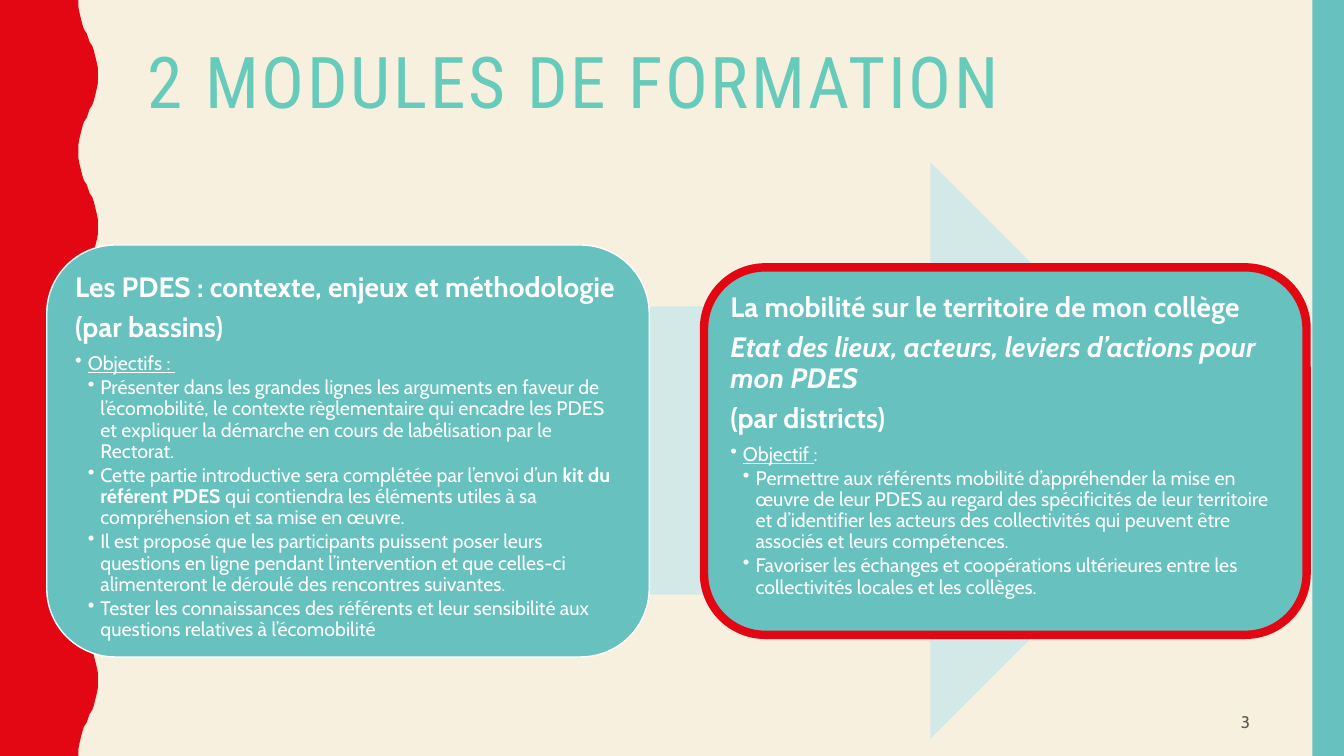
from pptx import Presentation
from pptx.dml.color import RGBColor
from pptx.enum.shapes import MSO_SHAPE
from pptx.enum.text import MSO_ANCHOR, PP_ALIGN
from pptx.oxml.ns import qn
from pptx.util import Pt
from lxml.etree import SubElement

WIDTH, HEIGHT = 960, 540
CREAM, RED, TEAL, MINT = "F7F0DF", "E30613", "66C1BF", "66CBBA"
PALE, WHITE, GREY = "D3E9E8", "FFFFFF", "595959"
BODY, HEAD = "Cabin", "Roboto Condensed"


def rgb(value):
    return RGBColor.from_string(value)


class Deck:
    """Holds the style and the current slide; one method per kind of element."""

    def __init__(self):
        self.prs = Presentation()
        self.prs.slide_width, self.prs.slide_height = Pt(WIDTH), Pt(HEIGHT)
        self.s = self.prs.slides.add_slide(self.prs.slide_layouts[6])
        self.s.background.fill.solid()
        self.s.background.fill.fore_color.rgb = rgb(CREAM)

    def paint(self, sp, fill, line=None, weight=1):
        sp.shadow.inherit = False
        sp.fill.solid()
        sp.fill.fore_color.rgb = rgb(fill)
        if line:
            sp.line.color.rgb = rgb(line)
            sp.line.width = Pt(weight)
        else:
            sp.line.fill.background()
        return sp

    def shape(self, kind, box, fill, line=None, weight=1):
        sp = self.s.shapes.add_shape(kind, *map(Pt, box))
        return self.paint(sp, fill, line, weight)

    def outline(self, points, fill):
        builder = self.s.shapes.build_freeform(*points[0], scale=Pt(1))
        builder.add_line_segments(points[1:], close=True)
        return self.paint(builder.convert_to_shape(), fill)

    def run(self, p, text, size, color, font=BODY, bold=False, italic=False, underline=False):
        r = p.add_run()
        r.text = text
        f = r.font
        f.name, f.size, f.color.rgb = font, Pt(size), rgb(color)
        f.bold, f.italic, f.underline = bold, italic, underline
        return r

    def text(self, box):
        tf = self.s.shapes.add_textbox(*map(Pt, box)).text_frame
        tf.word_wrap = True
        return tf

    def bullet(self, p, level):
        p.level = level
        pPr = p._p.get_or_add_pPr()
        pPr.set("marL", str(Pt(9 * level)))
        pPr.set("indent", str(-Pt(9)))
        SubElement(pPr, qn("a:buChar")).set("char", "•")

    def card(self, box, line, weight, paragraphs):
        sp = self.shape(MSO_SHAPE.ROUNDED_RECTANGLE, box, TEAL, line, weight)
        tf = sp.text_frame
        tf.word_wrap = True
        tf.vertical_anchor = MSO_ANCHOR.TOP
        tf.margin_left = tf.margin_top = tf.margin_right = tf.margin_bottom = Pt(6)
        for i, (level, runs) in enumerate(paragraphs):
            p = tf.add_paragraph() if i else tf.paragraphs[0]
            p.alignment = PP_ALIGN.LEFT
            p.line_spacing = 0.9
            p.space_after = Pt(2.1 if level else 7)
            if level:
                self.bullet(p, level)
            for text, style in runs:
                look = {"bold": level == 0, **style}
                self.run(p, text, 14 if level else 20, WHITE, **look)


def wavy_edge():
    """Right edge of the red band: five periods of trough, crest, trough."""
    middle_x, middle_y, period = 63, 27, 108
    quarter = [(6.8, 27), (6.6, 22), (6, 17), (5.2, 12.8), (4.3, 9), (3, 6), (1.5, 3)]
    rise = [(middle_x - dx, middle_y - dy) for dx, dy in quarter]
    rise += [(middle_x, middle_y)]
    rise += [(middle_x + dx, middle_y + dy) for dx, dy in reversed(quarter)]
    fall = [(x, period - y) for x, y in reversed(rise[:-1])]
    wave = rise + fall
    return [(x, y + period * n) for n in range(5) for x, y in wave]


CONTEXT_CARD = [
    (0, [("Les PDES : contexte, enjeux et méthodologie", {})]),
    (0, [("(par bassins)", {})]),
    (1, [("Objectifs : ", {"underline": True})]),
    (2, [("Présenter dans les grandes lignes les arguments en faveur de l’écomobilité, "
          "le contexte règlementaire qui encadre les PDES et expliquer la démarche en "
          "cours de labélisation par le Rectorat.", {})]),
    (2, [("Cette partie introductive sera complétée par l’envoi d’un ", {}),
         ("kit du référent PDES", {"bold": True}),
         (" qui contiendra les éléments utiles à sa compréhension et sa mise en œuvre.", {})]),
    (2, [("Il est proposé que les participants puissent poser leurs questions en ligne "
          "pendant l’intervention et que celles-ci alimenteront le déroulé des "
          "rencontres suivantes.", {})]),
    (2, [("Tester les connaissances des référents et leur sensibilité aux questions "
          "relatives à l’écomobilité", {})]),
]
MOBILITY_CARD = [
    (0, [("La mobilité sur le territoire de mon collège", {})]),
    (0, [("Etat des lieux, acteurs, leviers d’actions pour mon PDES", {"italic": True})]),
    (0, [("(par districts)", {})]),
    (1, [("Objectif ", {"underline": True}), (":", {})]),
    (2, [("Permettre aux référents mobilité d’appréhender la mise en œuvre de leur PDES "
          "au regard des spécificités de leur territoire et d’identifier les acteurs des "
          "collectivités qui peuvent être associés et leurs compétences.", {})]),
    (2, [("Favoriser les échanges et coopérations ultérieures entre les collectivités "
          "locales et les collèges.", {})]),
]


def main():
    deck = Deck()

    # Side bands
    deck.outline([(0, 0)] + wavy_edge() + [(0, HEIGHT)], RED)
    deck.shape(MSO_SHAPE.RECTANGLE, (937.5, 0, 22.5, HEIGHT), TEAL)

    # Title
    p = deck.text((98.6, 30.2, 801.4, 117.4)).paragraphs[0]
    p.line_spacing = 0.9
    r = deck.run(p, "2 MODULES DE FORMATION", 51, MINT, HEAD)
    r._r.get_or_add_rPr().set("spc", "200")

    # Arrow behind the two modules
    deck.shape(MSO_SHAPE.RIGHT_ARROW, (96.5, 115.9, 774, 411.8), PALE)

    # Module cards
    deck.card((33.4, 175, 430.4, 294.3), WHITE, 1, CONTEXT_CARD)
    deck.card((502.9, 191, 430.4, 262.5), RED, 6, MOBILITY_CARD)

    # Slide number
    tf = deck.text((678.2, 501.8, 221.8, 27.4))
    tf.vertical_anchor = MSO_ANCHOR.MIDDLE
    p = tf.paragraphs[0]
    p.alignment = PP_ALIGN.RIGHT
    deck.run(p, "3", 12, GREY)

    deck.prs.save("out.pptx")


if __name__ == "__main__":
    main()
